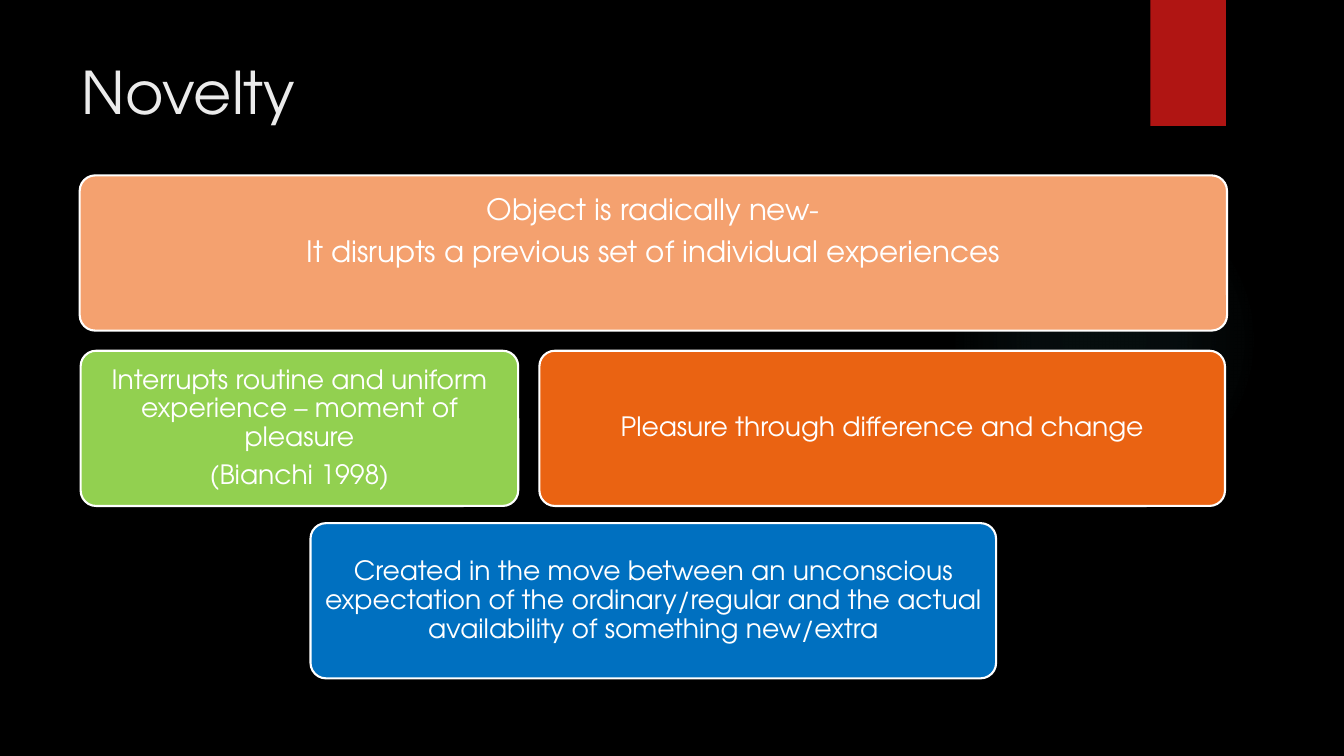
from dataclasses import dataclass

from lxml import etree
from pptx import Presentation
from pptx.dml.color import RGBColor
from pptx.enum.shapes import MSO_SHAPE
from pptx.enum.text import MSO_ANCHOR, PP_ALIGN
from pptx.oxml import parse_xml
from pptx.oxml.ns import nsdecls, qn
from pptx.shapes.autoshape import Shape
from pptx.slide import Slide
from pptx.text.text import TextFrame
from pptx.util import Inches, Pt

RECTANGLE, ROUNDED, OVAL = MSO_SHAPE.RECTANGLE, MSO_SHAPE.ROUNDED_RECTANGLE, MSO_SHAPE.OVAL
TOP, MIDDLE = MSO_ANCHOR.TOP, MSO_ANCHOR.MIDDLE
LEFT, CENTER = PP_ALIGN.LEFT, PP_ALIGN.CENTER

FONT = "TeX Gyre Adventor"
COLORS = {
    "background": "000000",
    "glow": "50B9C1",
    "banner": "B01513",
    "title": "EBEBEB",
    "white": "FFFFFF",
    "peach": "F4A16F",
    "green": "92D050",
    "orange": "EA6312",
    "blue": "0070C0",
}
CARD_HEIGHT = 1.54
GLOW_STOPS = ((0, 7), (36, 6), (69, 0))  # position and opacity, in percent


@dataclass(frozen=True)
class Card:
    left: float
    top: float
    width: float
    color: str
    paragraphs: tuple[str, ...]
    size: int = 19
    anchor: MSO_ANCHOR = MIDDLE
    inset: float = 0.08
    inset_top: float = 0.08


CARDS = (
    Card(0.79, 1.74, 11.38, "peach",
         ("Object is radically new-",
          "It disrupts a previous set of individual experiences"),
         size=21, anchor=TOP, inset=0.09, inset_top=0.15),
    Card(0.8, 3.48, 4.34, "green",
         ("Interrupts routine and uniform experience – moment of pleasure",
          "(Bianchi 1998)")),
    Card(5.35, 3.48, 6.8, "orange", ("Pleasure through difference and change",)),
    Card(3.08, 5.19, 6.8, "blue",
         ("Created in the move between an unconscious expectation of the "
          "ordinary/regular and the actual availability of something new/extra",)),
)


def rgb(name: str) -> RGBColor:
    return RGBColor.from_string(COLORS[name])


def write_text(frame: TextFrame, paragraphs: tuple[str, ...], *, size: float, color: str,
               align: PP_ALIGN = LEFT, anchor: MSO_ANCHOR = TOP,
               line_spacing: float = 1.0, space_after: float = 0) -> None:
    frame.word_wrap = True
    frame.vertical_anchor = anchor
    for index, text in enumerate(paragraphs):
        paragraph = frame.paragraphs[0] if index == 0 else frame.add_paragraph()
        paragraph.alignment = align
        paragraph.line_spacing = line_spacing
        paragraph.space_before = Pt(0)
        paragraph.space_after = Pt(space_after)
        run = paragraph.add_run()
        run.text = text
        run.font.name = FONT
        run.font.size = Pt(size)
        run.font.color.rgb = rgb(color)


def add_plain_shape(slide: Slide, kind: MSO_SHAPE, left: float, top: float,
                    width: float, height: float, color: str) -> Shape:
    shape = slide.shapes.add_shape(kind, Inches(left), Inches(top),
                                   Inches(width), Inches(height))
    shape.shadow.inherit = False
    shape.fill.solid()
    shape.fill.fore_color.rgb = rgb(color)
    shape.line.fill.background()
    return shape


def add_glow(slide: Slide) -> None:
    glow = add_plain_shape(slide, OVAL, 9.41, 1.83, 3.08, 3.08, "glow")
    gradient = parse_xml(
        f'<a:gradFill {nsdecls("a")}><a:gsLst/><a:path path="circle">'
        '<a:fillToRect l="50000" t="50000" r="50000" b="50000"/></a:path></a:gradFill>')
    for position, opacity in GLOW_STOPS:
        stop = etree.SubElement(gradient[0], qn("a:gs"), pos=str(position * 1000))
        color = etree.SubElement(stop, qn("a:srgbClr"), val=COLORS["glow"])
        etree.SubElement(color, qn("a:alpha"), val=str(opacity * 1000))
    properties = glow.element.spPr
    properties.replace(properties.find(qn("a:solidFill")), gradient)


def add_title(slide: Slide, text: str) -> None:
    title = slide.shapes.title
    title.left, title.top = Inches(0.71), Inches(0.5)
    title.width, title.height = Inches(10.29), Inches(1.53)
    write_text(title.text_frame, (text,), size=42, color="title")


def add_card(slide: Slide, card: Card) -> None:
    shape = add_plain_shape(slide, ROUNDED, card.left, card.top,
                            card.width, CARD_HEIGHT, card.color)
    shape.adjustments[0] = 0.1
    shape.line.color.rgb = rgb("white")
    shape.line.width = Pt(1.5)
    frame = shape.text_frame
    frame.margin_left = frame.margin_right = frame.margin_bottom = Inches(card.inset)
    frame.margin_top = Inches(card.inset_top)
    write_text(frame, card.paragraphs, size=card.size, color="white", align=CENTER,
               anchor=card.anchor, line_spacing=0.9, space_after=0.35 * card.size)


def main() -> None:
    presentation = Presentation()
    presentation.slide_width, presentation.slide_height = Inches(13.33), Inches(7.5)
    slide = presentation.slides.add_slide(presentation.slide_layouts[5])

    # Backdrop
    slide.background.fill.solid()
    slide.background.fill.fore_color.rgb = rgb("background")
    add_glow(slide)
    add_plain_shape(slide, RECTANGLE, 11.41, 0, 0.75, 1.25, "banner")

    # Title and cards
    add_title(slide, "Novelty")
    for card in CARDS:
        add_card(slide, card)

    presentation.save("out.pptx")


if __name__ == "__main__":
    main()
